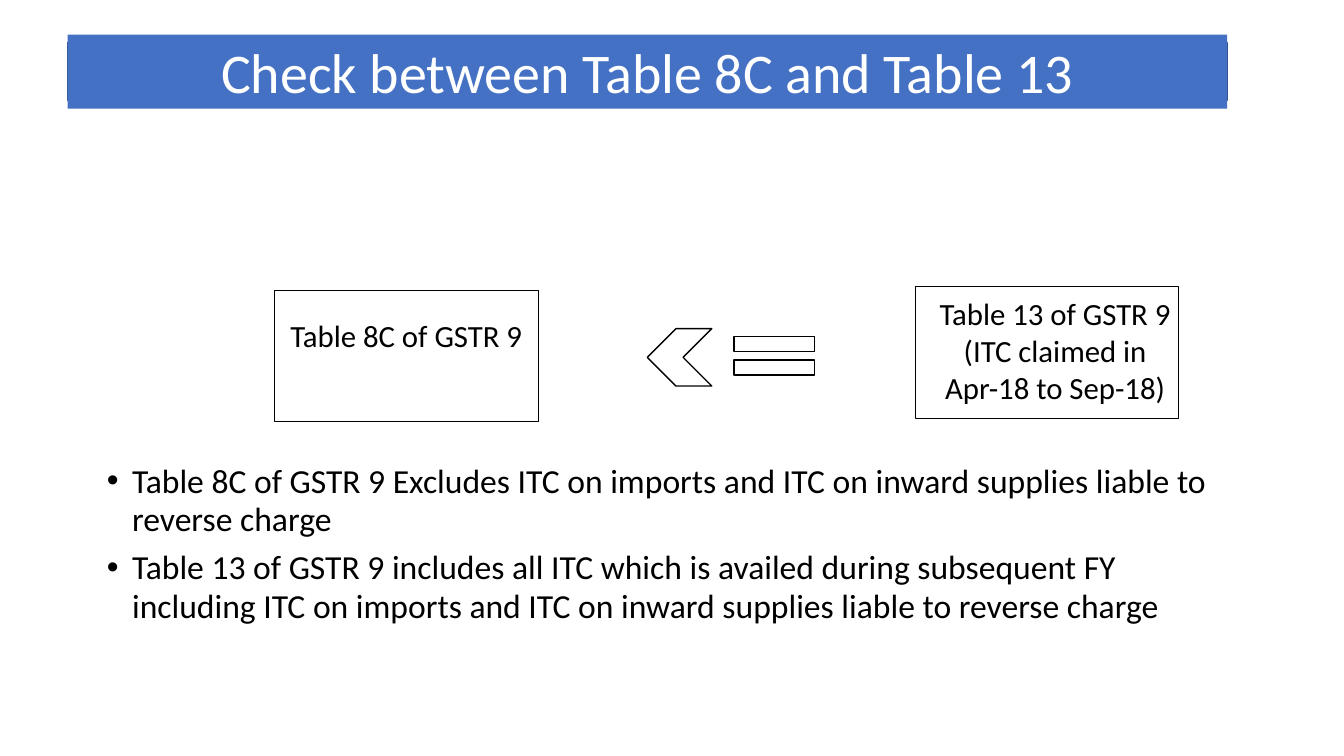
from lxml.etree import SubElement
from pptx import Presentation
from pptx.dml.color import RGBColor as Rgb
from pptx.enum.shapes import MSO_SHAPE as Kind
from pptx.enum.text import MSO_ANCHOR as Anchor, MSO_AUTO_SIZE as Fit, PP_ALIGN as Align
from pptx.oxml.ns import qn
from pptx.util import Pt

PX = 9144
HUES = {"band": "4471C4", "edge": "2E528F", "ink": "000000", "pale": "FFFFFF"}


class Deck:
    """Holds the style and the current slide, and draws each kind of element."""

    def __init__(self, wide, high, font):
        self.deck = Presentation()
        self.deck.slide_width, self.deck.slide_height = wide * PX, high * PX
        self.font = font
        self.slide = self.deck.slides.add_slide(self.deck.slide_layouts[1])

    def hue(self, name):
        return Rgb.from_string(HUES[name])

    def place(self, item, area):
        item.left, item.top, item.width, item.height = (n * PX for n in area)

    def frame(self, item, pads=(0, 0, 0, 0), anchor=Anchor.TOP):
        text = item.text_frame
        text.word_wrap, text.auto_size = True, Fit.NONE
        text.vertical_anchor = anchor
        text.margin_left, text.margin_top, text.margin_right, text.margin_bottom = (
            n * PX for n in pads)
        return text

    def run(self, para, words, size, hue="ink", align=Align.LEFT):
        para.alignment = align
        run = para.add_run()
        run.text = words
        run.font.name, run.font.size = self.font, Pt(size)
        run.font.color.rgb = self.hue(hue)

    def shape(self, kind, area, hue="ink", turn=0):
        item = self.slide.shapes.add_shape(kind, *(n * PX for n in area))
        item.shadow.inherit = False
        item.fill.background()
        item.line.color.rgb, item.line.width = self.hue(hue), Pt(0.96)
        item.rotation = turn
        return item

    def title(self, words, area):
        item = self.slide.shapes.title
        self.place(item, area)
        item.fill.solid()
        item.fill.fore_color.rgb = self.hue("band")
        text = self.frame(item, anchor=Anchor.MIDDLE)
        text.auto_size = Fit.SHAPE_TO_FIT_TEXT
        self.run(text.paragraphs[0], words, 40, "pale", Align.CENTER)
        edge = self.shape(Kind.RECTANGLE, area, "edge")
        item._element.addprevious(edge._element)

    def box(self, words, area, pads, align):
        text = self.frame(self.shape(Kind.RECTANGLE, area), pads)
        self.run(text.paragraphs[0], words, 22, align=align)

    def points(self, lines, area):
        item = self.slide.placeholders[1]
        self.place(item, area)
        text = self.frame(item, (0, 1, 0, 0))
        for at, words in enumerate(lines):
            para = text.add_paragraph() if at else text.paragraphs[0]
            para.line_spacing = Pt(27.4)
            para.space_before = Pt(7 if at else 1)
            self.run(para, words, 24)
            props = para._p.get_or_add_pPr()
            props.set("marL", str(26 * PX))
            props.set("indent", str(-25 * PX))
            SubElement(props, qn("a:buFont")).set("typeface", "Arial")
            SubElement(props, qn("a:buChar")).set("char", "•")


def main():
    deck = Deck(1333, 750, "Calibri")
    deck.title("Check between Table 8C and Table 13", (67, 42, 1150, 58))
    deck.points((
        "Table 8C of GSTR 9 Excludes ITC on imports and ITC on inward supplies "
        "liable to reverse charge",
        "Table 13 of GSTR 9 includes all ITC which is availed during subsequent FY "
        "including ITC on imports and ITC on inward supplies liable to reverse charge",
    ), (105, 457, 1097, 165))
    deck.box("Table 8C of GSTR 9", (272, 288, 262, 130), (16, 26, 0, 0), Align.LEFT)
    deck.box("Table 13 of GSTR 9 (ITC claimed in Apr-18 to Sep-18)",
             (908, 284, 261, 131), (16, 8, 0, 0), Align.CENTER)
    for row in range(2):
        deck.shape(Kind.RECTANGLE, (728, 334 + 23 * row, 80, 15))
    deck.shape(Kind.CHEVRON, (642, 326, 64, 57), turn=180)
    deck.deck.save("out.pptx")


if __name__ == "__main__":
    main()
